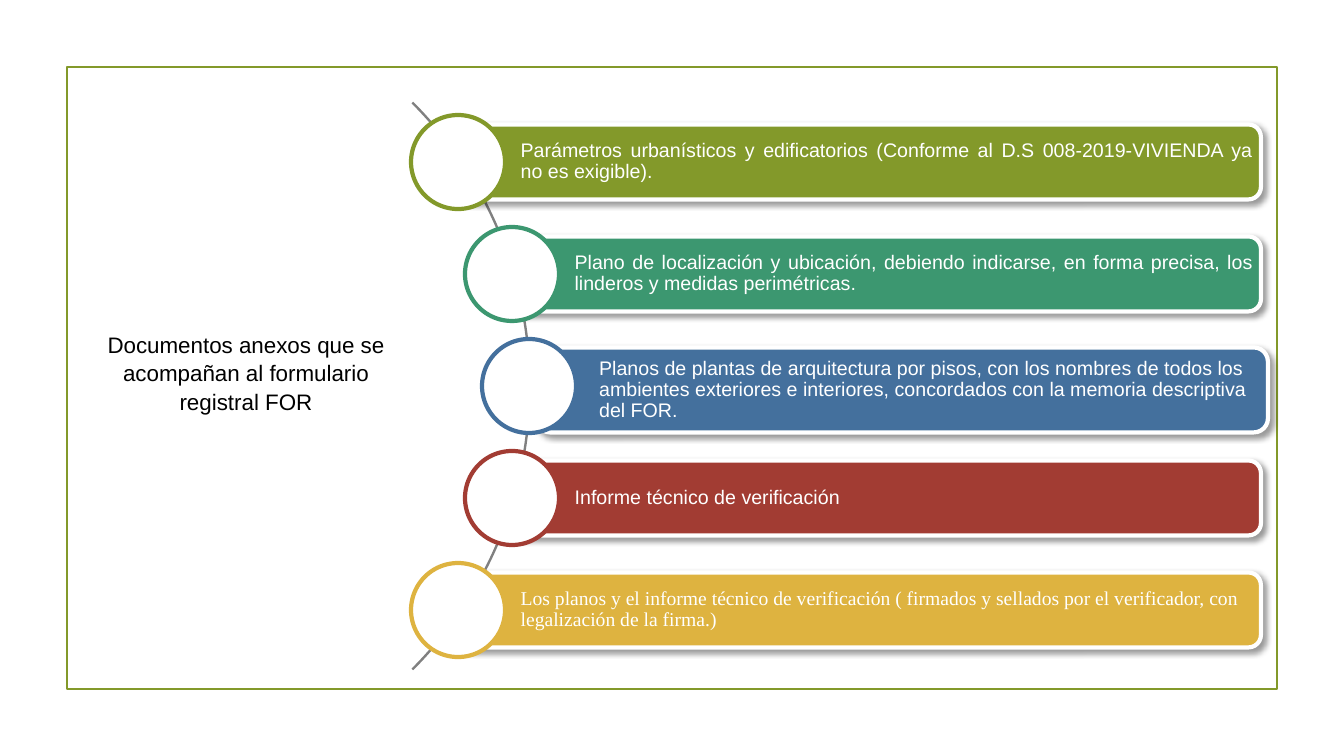
import pptx
import pptx.util
import pptx.dml.color
import pptx.enum.shapes
import pptx.enum.text
import pptx.oxml
import pptx.oxml.ns

SHAPE = pptx.enum.shapes.MSO_SHAPE
ALIGN = pptx.enum.text.PP_ALIGN
MIDDLE = pptx.enum.text.MSO_ANCHOR.MIDDLE

HEADING = "Documentos anexos que se acompañan al formulario registral FOR"
DOCUMENTS = [
    ("Parámetros urbanísticos y edificatorios (Conforme al D.S 008-2019-VIVIENDA ya no es exigible).",
     "83992A", "Arial", ALIGN.JUSTIFY),
    ("Plano de localización y ubicación, debiendo indicarse, en forma precisa, los linderos y medidas perimétricas.",
     "3C9770", "Arial", ALIGN.JUSTIFY),
    ("Planos de plantas de arquitectura por pisos, con los nombres de todos los ambientes exteriores "
     "e interiores, concordados con la memoria descriptiva del FOR.",
     "44709D", "Arial", ALIGN.LEFT),
    ("Informe técnico de verificación", "A23C33", "Arial", ALIGN.LEFT),
    ("Los planos y el informe técnico de verificación ( firmados y sellados por el verificador, "
     "con legalización de la firma.)",
     "DEB340", "Times New Roman", ALIGN.LEFT),
]

CIRCLE_LEFTS = [411, 465, 482, 465, 411]
CIRCLE = 94
FIRST_CENTER, STEP = 162, 112
BAR = {"start": 47, "right": 1261, "height": 75, "drop": 0}
TALL_BAR = {"start": 54, "right": 1268, "height": 85, "drop": 4}
TALL_INDEX = 2

SHADOW = (
    '<a:effectLst %s><a:outerShdw blurRad="50800" dist="38100" dir="2700000" algn="tl" rotWithShape="0">'
    '<a:srgbClr val="000000"><a:alpha val="40000"/></a:srgbClr></a:outerShdw></a:effectLst>'
    % pptx.oxml.ns.nsdecls("a")
)


def px(length):
    return pptx.util.Emu(round(length * 914400 / 100.8))


def color(code):
    return pptx.dml.color.RGBColor.from_string(code)


def add_part(kind, left, top, width, height, fill=None, line=None, weight=3):
    part = slide.shapes.add_shape(kind, px(left), px(top), px(width), px(height))
    part.shadow.inherit = False
    if fill:
        part.fill.solid()
        part.fill.fore_color.rgb = color(fill)
    else:
        part.fill.background()
    if line:
        part.line.color.rgb = color(line)
        part.line.width = pptx.util.Pt(weight)
    else:
        part.line.fill.background()
    return part


def write(frame, words, size, font, code, align, spacing):
    frame.word_wrap = True
    paragraph = frame.paragraphs[0]
    paragraph.text = words
    paragraph.alignment = align
    paragraph.line_spacing = spacing
    paragraph.font.size = pptx.util.Pt(size)
    paragraph.font.name = font
    paragraph.font.color.rgb = color(code)
    return paragraph


deck = pptx.Presentation()
deck.slide_width, deck.slide_height = px(1344), px(756)
slide = deck.slides.add_slide(deck.slide_layouts[6])

add_part(SHAPE.RECTANGLE, 67, 67, 1210, 622, line="83992A", weight=1.25)

arc = add_part(SHAPE.BLOCK_ARC, -273, -16, 804, 804, fill="808080")
for index, value in enumerate((189, 27, 0.003)):
    arc.adjustments[index] = value

for index, (words, hue, font, align) in enumerate(DOCUMENTS):
    center = FIRST_CENTER + index * STEP
    circle_left = CIRCLE_LEFTS[index]
    size = TALL_BAR if index == TALL_INDEX else BAR
    bar_left = circle_left + size["start"]
    bar = add_part(SHAPE.ROUNDED_RECTANGLE, bar_left, center + size["drop"] - size["height"] / 2,
                   size["right"] - bar_left, size["height"], hue, "FFFFFF")
    properties = bar.fill._xPr
    properties.replace(properties.find(pptx.oxml.ns.qn("a:effectLst")), pptx.oxml.parse_xml(SHADOW))
    label = bar.text_frame
    label.margin_left = px(59)
    label.margin_right = label.margin_top = label.margin_bottom = px(4)
    label.vertical_anchor = MIDDLE
    write(label, words, 14, font, "FFFFFF", align, 0.9)
    add_part(SHAPE.OVAL, circle_left, center - CIRCLE / 2, CIRCLE, CIRCLE, "FFFFFF", hue)

heading = slide.shapes.add_textbox(px(87), px(324), px(308), px(98))
heading_line = write(heading.text_frame, HEADING, 16, "Arial", "000000", ALIGN.CENTER, 1.07)
heading_line.space_after = pptx.util.Pt(8)
heading_line._p.get_or_add_pPr().set("marL", str(px(10)))

deck.save("out.pptx")
